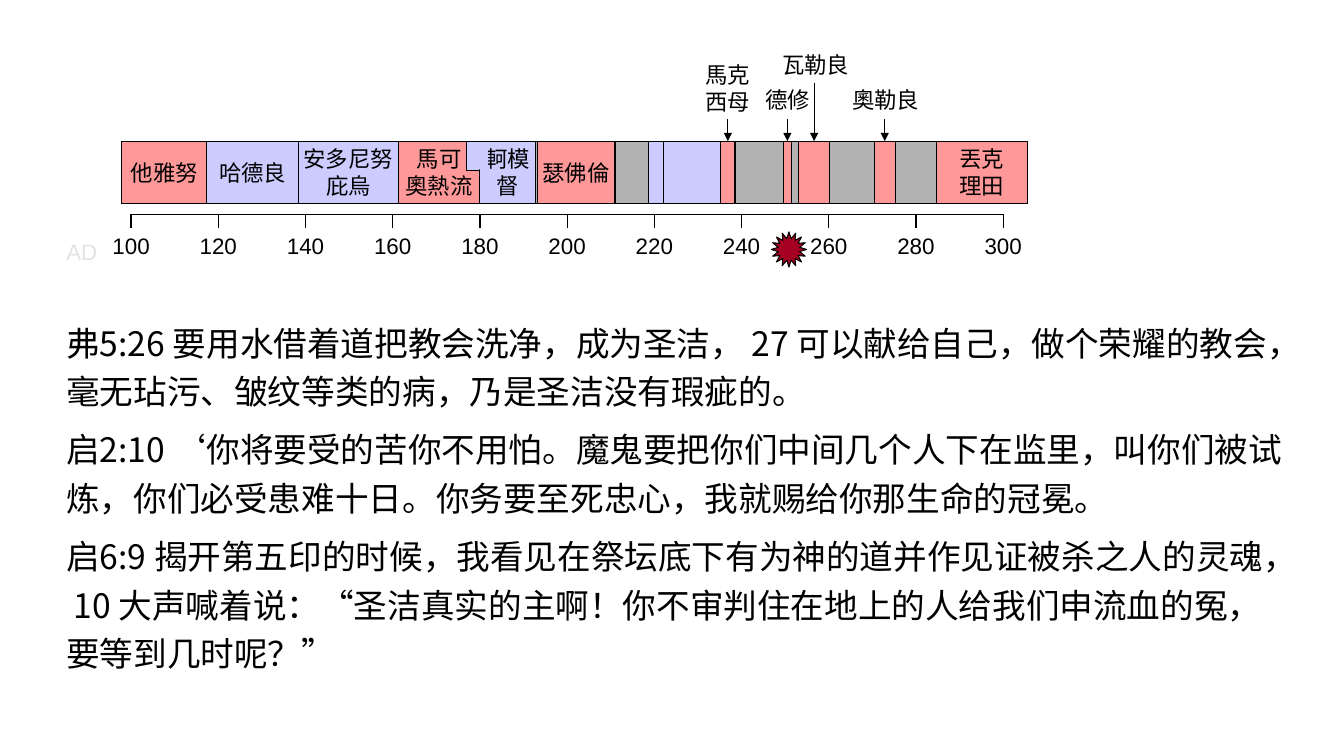
from pptx import Presentation
from pptx import util as u
from pptx.dml.color import RGBColor
from pptx.enum import shapes, text
from pptx.oxml.ns import qn
from lxml import etree

CELL = u.Inches(0.01)
COLUMNS, ROWS = 1333, 750
COLORS = {"ink": "000000", "paper": "FFFFFF", "persecutor": "FF9999", "tolerant": "CCCCFF",
          "other": "B2B2B2", "star": "A50021", "era": "E3E3E3"}
REIGNS = [
    ("他雅努", 84, "persecutor"), ("哈德良", 91, "tolerant"), ("安多尼努\n庇烏", 99, "tolerant"),
    ("馬可\n奧熱流", 81, "persecutor"), ("軻模\n督", 55, "tolerant"), ("", 2, "other"),
    ("瑟佛倫", 77, "persecutor"), ("", 33, "other"), ("", 15, "tolerant"), ("", 57, "tolerant"),
    ("", 14, "persecutor"), ("", 48, "other"), ("", 8, "persecutor"), ("", 7, "other"),
    ("", 31, "persecutor"), ("", 44, "other"), ("", 21, "persecutor"), ("", 41, "other"),
    ("丟克\n理田", 90, "persecutor"),
]
CALLOUTS = [
    ("馬克\n西母", 10, (566, -84, 69, 64), -22), ("德修", 12, (625, -59, 70, 37), -22),
    ("瓦勒良", 14, (639, -94, 98, 37), -58), ("奧勒良", 16, (714, -59, 87, 37), -22),
]
VERSES = [
    "弗5:26 要用水借着道把教会洗净，成为圣洁， 27 可以献给自己，做个荣耀的教会，毫无玷污、皱纹等类的病，乃是圣洁没有瑕疵的。",
    "启2:10 ‘你将要受的苦你不用怕。魔鬼要把你们中间几个人下在监里，叫你们被试炼，你们必受患难十日。你务要至死忠心，我就赐给你那生命的冠冕。",
    "启6:9 揭开第五印的时候，我看见在祭坛底下有为神的道并作见证被杀之人的灵魂， 10 大声喊着说：“圣洁真实的主啊！你不审判住在地上的人给我们申流血的冤，要等到几时呢？”",
]
CENTERED = {"alignment": text.PP_ALIGN.CENTER}
VERSE_FORMAT = {"line_spacing": 1.2, "space_after": u.Pt(7.2)}


def color(name):
    """Return the named colour."""
    return RGBColor.from_string(COLORS[name])


def place(box):
    """Turn grid cells into slide lengths."""
    return [CELL * cells for cells in box]


def write(frame, lines, layout, size=16, font="Calibri", ink="ink"):
    """Fill a text frame with one formatted paragraph per line."""
    for index, line in enumerate(lines):
        para = frame.add_paragraph() if index else frame.paragraphs[0]
        for name, value in layout.items():
            setattr(para, name, value)
        span = para.add_run()
        span.text = line
        for name, value in {"size": u.Pt(size), "name": font}.items():
            setattr(span.font, name, value)
        span.font.color.rgb = color(ink)
        east_asian = etree.SubElement(span.font._element, qn("a:ea"))
        east_asian.set("typeface", "Noto Sans CJK SC")


def add_label(page, box, lines, layout, **style):
    """Add a wrapping text box."""
    label = page.shapes.add_textbox(*place(box))
    label.text_frame.word_wrap = True
    write(label.text_frame, lines, layout, **style)


def add_block(page, box, fill, kind=shapes.MSO_SHAPE.RECTANGLE, outlined=True):
    """Add a flat filled shape."""
    block = page.shapes.add_shape(kind, *place(box))
    block.shadow.inherit = False
    block.fill.solid()
    block.fill.fore_color.rgb = color(fill)
    if outlined:
        block.line.color.rgb = color("ink")
        block.line.width = u.Pt(0.75)
    else:
        block.line.fill.background()
    return block


def add_row(page, box, count, border, filled):
    """Add a one-row table with equal columns and plain borders."""
    table = page.shapes.add_table(1, count, *place(box)).table
    table.first_row = table.horz_banding = False
    table.rows[0].height = CELL * 19
    for cell in table.rows[0].cells:
        properties = cell._tc.get_or_add_tcPr()
        for side in ("a:lnL", "a:lnR", "a:lnT", "a:lnB"):
            line = etree.SubElement(properties, qn(side), w=str(u.Pt(1)))
            solid = etree.SubElement(line, qn("a:solidFill"))
            etree.SubElement(solid, qn("a:srgbClr"), val=COLORS[border])
        if filled:
            cell.fill.solid()
            cell.fill.fore_color.rgb = color("paper")
        else:
            cell.fill.background()
        cell.margin_left = cell.margin_right = 0
    return table


def add_axis(page, box):
    """Draw the scale of years, its ticks and the era label."""
    left, top, width, height = box
    years = range(100, 301, 20)
    step = width / (len(years) - 1)
    add_row(page, (left, top, width, 40), len(years) - 1, "ink", False)
    scale = add_row(page, (left - step / 2, top + 14, width + step, height - 14),
                    len(years), "paper", True)
    for cell, year in zip(scale.rows[0].cells, years):
        write(cell.text_frame, [str(year)], CENTERED, font="Arial")
    add_label(page, (left - 74, top + 18, 60, 37), ["AD"], {}, font="Arial", ink="era")
    star = add_block(page, (left + 635, top + 17, 35, 35), "star", shapes.MSO_SHAPE.STAR_16_POINT)
    star.adjustments[0] = 0.31


def add_reigns(page, box):
    """Draw the reigns side by side and return their blocks."""
    left, top, width, height = box
    blocks = []
    for name, span, fill in REIGNS:
        block = add_block(page, (left, top, span, height), fill)
        frame = block.text_frame
        for key, value in {"word_wrap": False, "vertical_anchor": text.MSO_ANCHOR.MIDDLE,
                           "margin_left": 0, "margin_right": 0}.items():
            setattr(frame, key, value)
        if name:
            write(frame, name.split("\n"), CENTERED)
        blocks.append(block)
        left += span
    add_block(page, (box[0] + 342, top, 13, 29), "tolerant")
    add_block(page, (box[0] + 353, top + 1, 10, 27), "tolerant", outlined=False)
    return blocks


def add_callouts(page, box, blocks):
    """Name the short reigns above the bar and point at each."""
    left, top = box[:2]
    for name, index, (x, y, width, height), start in CALLOUTS:
        add_label(page, (left + x, top + y, width, height), name.split("\n"), CENTERED)
        block = blocks[index]
        middle = block.left + block.width // 2
        arrow = page.shapes.add_connector(shapes.MSO_CONNECTOR.STRAIGHT, middle,
                                          CELL * (top + start), middle, block.top)
        arrow.end_connect(block, 0)
        arrow.line.color.rgb = color("ink")
        arrow.line.width = u.Pt(0.75)
        etree.SubElement(arrow.line._get_or_add_ln(), qn("a:tailEnd"), type="triangle")
        etree.SubElement(arrow._element.spPr, qn("a:effectLst"))


def main():
    """Build the timeline slide with its verses."""
    deck = Presentation()
    deck.slide_width, deck.slide_height = place((COLUMNS, ROWS))
    page = deck.slides.add_slide(deck.slide_layouts[6])
    bar = (121, 140, 898, 62)
    add_axis(page, (130, 213, 865, 51))
    add_callouts(page, bar, add_reigns(page, bar))
    add_label(page, (56, 307, 1227, 367), VERSES, VERSE_FORMAT, size=24, font="Noto Sans CJK SC")
    deck.save("out.pptx")


if __name__ == "__main__":
    main()
